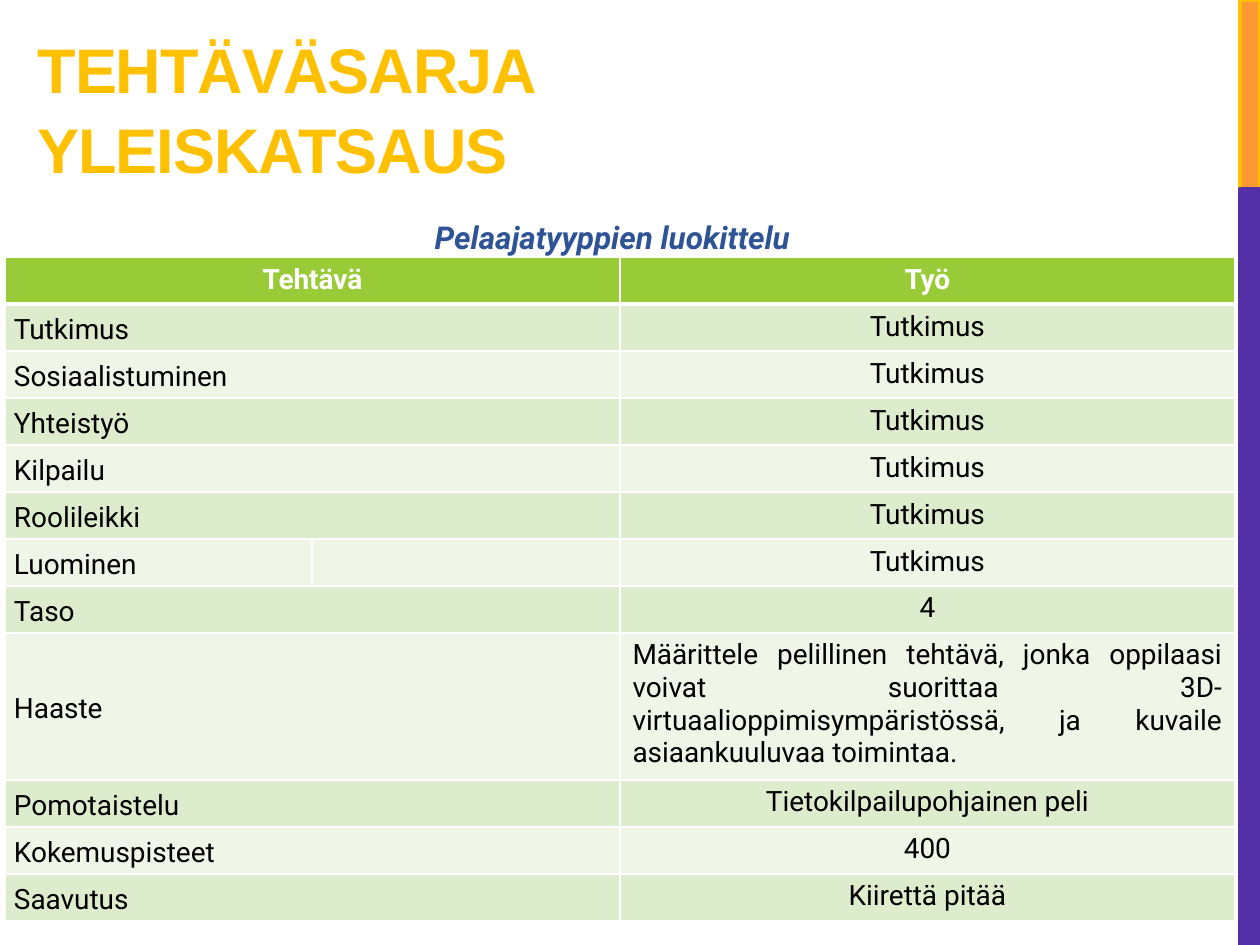
"""Build the quest overview slide with its table of tasks and work."""
from dataclasses import dataclass

from lxml import etree
from pptx import Presentation
from pptx.dml.color import RGBColor
from pptx.enum.shapes import MSO_SHAPE
from pptx.enum.text import MSO_ANCHOR, MSO_AUTO_SIZE, PP_ALIGN
from pptx.oxml.ns import qn
from pptx.util import Emu, Pt

RECTANGLE = MSO_SHAPE.RECTANGLE
TOP, MIDDLE, BOTTOM = MSO_ANCHOR.TOP, MSO_ANCHOR.MIDDLE, MSO_ANCHOR.BOTTOM
LEFT, CENTER, JUSTIFY = PP_ALIGN.LEFT, PP_ALIGN.CENTER, PP_ALIGN.JUSTIFY
NO_FIT, GROW = MSO_AUTO_SIZE.NONE, MSO_AUTO_SIZE.SHAPE_TO_FIT_TEXT
EMU_PER_PX = 914400 / 126


@dataclass(frozen=True)
class Theme:
    """Colours, fonts and type sizes of the slide."""
    gold: str = "FFC000"
    orange: str = "FF9933"
    purple: str = "5330A5"
    blue: str = "2F5496"
    white: str = "FFFFFF"
    black: str = "000000"
    header: str = "99CB38"
    bands: tuple = ("DEECCE", "EFF6E8")
    title_font: str = "Arial"
    body_font: str = "Roboto"
    title_size: int = 36
    subtitle_size: int = 18
    table_size: int = 16


@dataclass(frozen=True)
class Box:
    """Place and size in px."""
    left: int
    top: int
    width: int
    height: int


@dataclass(frozen=True)
class Bar:
    """Coloured strip on the right edge."""
    box: Box
    fill: str
    line: str


@dataclass(frozen=True)
class Task:
    """Table row with a label and its work."""
    label: str
    work: str
    height: int = 47
    align: PP_ALIGN = CENTER
    split: bool = False


THEME = Theme()
BARS = (
    Bar(Box(1240, 0, 20, 189), THEME.orange, THEME.gold),
    Bar(Box(1240, 189, 20, 756), THEME.purple, THEME.purple),
)
TITLE_BOX = Box(25, 3, 797, 189)
SUBTITLE_BOX = Box(63, 193, 1099, 64)
TABLE_BOX = Box(5, 257, 1230, 666)
COLUMNS = (307, 308, 615)
HEADER = Task("Tehtävä", "Työ")
CHALLENGE = (
    "Määrittele pelillinen tehtävä, jonka oppilaasi voivat suorittaa "
    "3D-virtuaalioppimisympäristössä, ja kuvaile asiaankuuluvaa toimintaa."
)
TASKS = (
    Task("Tutkimus", "Tutkimus"),
    Task("Sosiaalistuminen", "Tutkimus"),
    Task("Yhteistyö", "Tutkimus"),
    Task("Kilpailu", "Tutkimus"),
    Task("Roolileikki", "Tutkimus"),
    Task("Luominen", "Tutkimus", split=True),
    Task("Taso", "4"),
    Task("Haaste", CHALLENGE, 147, JUSTIFY),
    Task("Pomotaistelu", "Tietokilpailupohjainen peli"),
    Task("Kokemuspisteet", "400"),
    Task("Saavutus", "Kiirettä pitää"),
)
LABEL_CELL = {"vertical_anchor": MIDDLE, "margin_left": 9, "margin_right": 9,
              "margin_top": 0, "margin_bottom": 0}
LABEL_PARA = {"alignment": JUSTIFY, "line_spacing": 1.15,
              "space_before": Pt(3), "space_after": Pt(3)}


def px(value: int) -> Emu:
    """Turn px into EMU."""
    return Emu(round(value * EMU_PER_PX))


def place(box: Box) -> tuple:
    """Give the four lengths of a box in EMU."""
    return px(box.left), px(box.top), px(box.width), px(box.height)


def apply(target, values: dict) -> None:
    """Set attributes from a dict of format values."""
    for name, value in values.items():
        setattr(target, name, value)


def write(frame, text: str, color: str, font: dict, layout: dict):
    """Write one formatted paragraph and return its run."""
    para = frame.paragraphs[0]
    apply(para, layout)
    span = para.add_run()
    span.text = text
    apply(span.font, font)
    span.font.color.rgb = RGBColor.from_string(color)
    return span


def draw_bar(page, bar: Bar) -> None:
    """Draw an edge strip."""
    shape = page.shapes.add_shape(RECTANGLE, *place(bar.box))
    shape.shadow.inherit = False
    shape.fill.solid()
    shape.fill.fore_color.rgb = RGBColor.from_string(bar.fill)
    shape.line.color.rgb = RGBColor.from_string(bar.line)
    shape.line.width = Pt(2.25)


def draw_title(page) -> None:
    """Fill the title placeholder."""
    title = page.shapes.title
    apply(title, dict(zip(("left", "top", "width", "height"), place(TITLE_BOX))))
    apply(title.text_frame, {"word_wrap": True, "auto_size": NO_FIT, "vertical_anchor": BOTTOM})
    font = {"name": THEME.title_font, "size": Pt(THEME.title_size), "bold": True}
    span = write(title.text_frame, "TEHTÄVÄSARJA YLEISKATSAUS", THEME.gold, font,
                 {"alignment": LEFT, "line_spacing": 1.05})
    span.font._element.set("spc", "-60")


def draw_subtitle(page) -> None:
    """Add the heading above the table."""
    box = page.shapes.add_textbox(*place(SUBTITLE_BOX))
    apply(box.text_frame, {"word_wrap": True, "auto_size": GROW})
    font = {"name": THEME.body_font, "size": Pt(THEME.subtitle_size), "bold": True, "italic": True}
    write(box.text_frame, "Pelaajatyyppien luokittelu", THEME.blue, font,
          {"alignment": CENTER, "line_spacing": 1.5, "space_after": Pt(6)})


def style_cell(cell, fill: str, top: int, bottom: int) -> None:
    """Give a cell its white borders and its fill."""
    properties = cell._tc.get_or_add_tcPr()
    for side, points in (("L", 1), ("R", 1), ("T", top), ("B", bottom)):
        line = etree.SubElement(properties, qn(f"a:ln{side}"), w=str(Pt(points)))
        solid = etree.SubElement(line, qn("a:solidFill"))
        etree.SubElement(solid, qn("a:srgbClr"), val=THEME.white)
    cell.fill.solid()
    cell.fill.fore_color.rgb = RGBColor.from_string(fill)


def draw_row(table, index: int, task: Task) -> None:
    """Fill one table row."""
    header = index == 0
    fill = THEME.header if header else THEME.bands[(index - 1) % 2]
    color = THEME.white if header else THEME.black
    font = {"name": THEME.body_font, "size": Pt(THEME.table_size), "bold": header}
    table.rows[index].height = px(task.height)
    label, spare, work = table.rows[index].cells
    for cell in (label, spare, work):
        style_cell(cell, fill, 3 if index == 1 else 1, 3 if header else 1)
    if not header:
        for cell in (label, spare):
            apply(cell, {name: px(value) if name.startswith("margin") else value
                         for name, value in LABEL_CELL.items()})
    if not task.split:
        label.merge(spare)
    write(label.text_frame, task.label, color, font,
          {"alignment": CENTER} if header else LABEL_PARA)
    work.vertical_anchor = TOP
    write(work.text_frame, task.work, color, font, {"alignment": task.align})


def draw_table(page) -> None:
    """Add the table of tasks."""
    rows = (HEADER, *TASKS)
    table = page.shapes.add_table(len(rows), len(COLUMNS), *place(TABLE_BOX)).table
    for column, width in zip(table.columns, COLUMNS):
        column.width = px(width)
    for index, task in enumerate(rows):
        draw_row(table, index, task)


def main() -> None:
    """Build and save the deck."""
    deck = Presentation()
    deck.slide_width, deck.slide_height = px(1260), px(945)
    page = deck.slides.add_slide(deck.slide_layouts[5])
    for bar in BARS:
        draw_bar(page, bar)
    draw_title(page)
    draw_subtitle(page)
    draw_table(page)
    deck.save("out.pptx")


if __name__ == "__main__":
    main()
